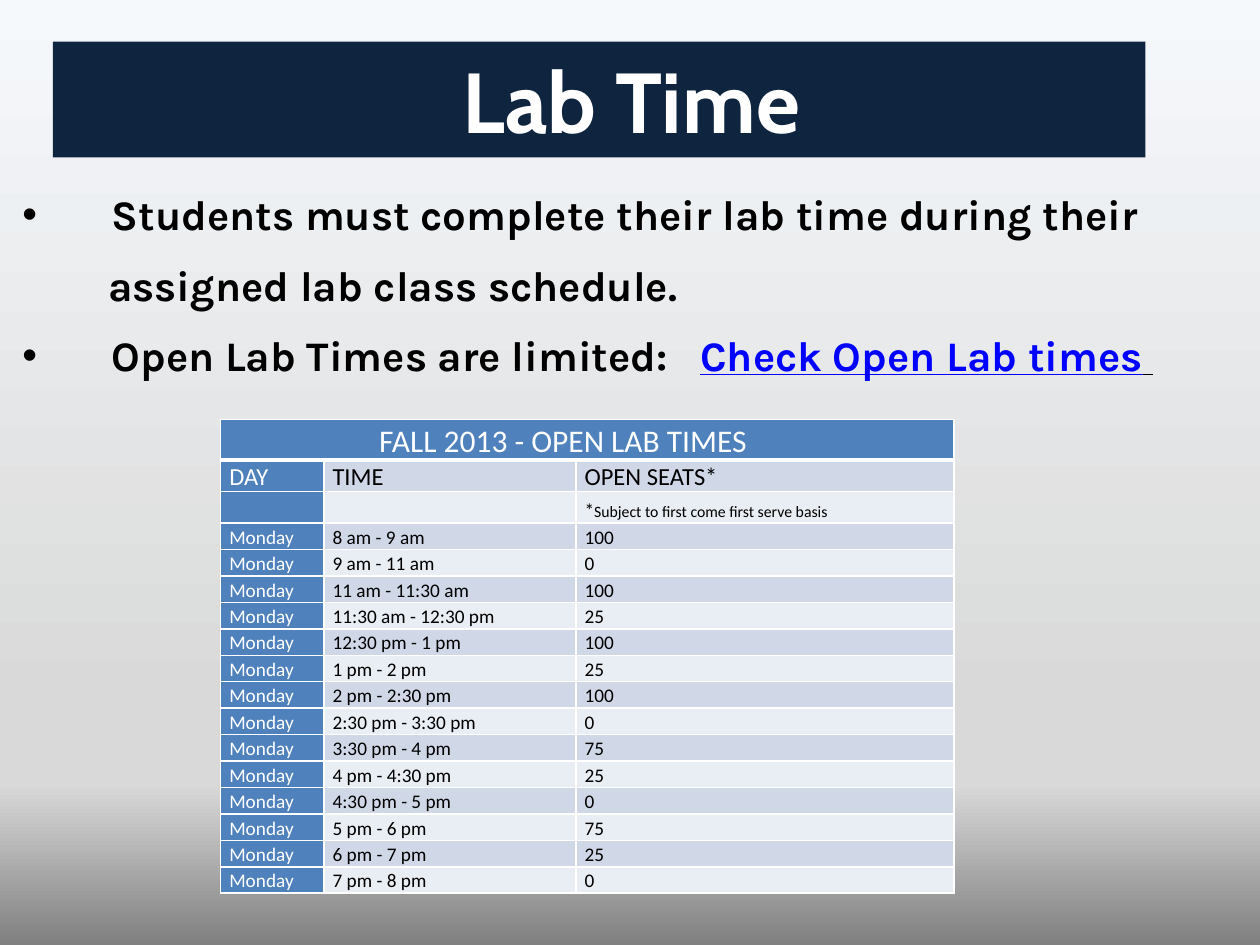
from lxml import etree
from pptx import Presentation
from pptx.dml.color import RGBColor
from pptx.enum.shapes import MSO_SHAPE
from pptx.enum.text import MSO_ANCHOR, PP_ALIGN
from pptx.oxml.ns import qn
from pptx.util import Inches, Pt

RECT = MSO_SHAPE.RECTANGLE
MID, LOW, TOP = MSO_ANCHOR.MIDDLE, MSO_ANCHOR.BOTTOM, MSO_ANCHOR.TOP
MIDDLE, LEFT = PP_ALIGN.CENTER, PP_ALIGN.LEFT
WHITE, BLACK, NAVY, LINK = "FFFFFF", "000000", "0F243E", "0000FF"
BLUE, PALE, LIGHT = "4F81BD", "D0D8E8", "E9EDF4"


def color(code):
    return RGBColor.from_string(code)


def apply(item, values):
    for name, value in values.items():
        setattr(item, name, value)


def add(parent, tag, **values):
    return etree.SubElement(parent, qn(tag), values)


class Deck:
    def __init__(self):
        self.file = Presentation()
        apply(self.file, {"slide_width": Inches(10), "slide_height": Inches(7.5)})
        self.unit = self.file.slide_width / 100
        self.slide = self.file.slides.add_slide(self.file.slide_layouts[6])

    def size(self, count):
        return round(count * self.unit)

    def box(self, spot):
        return [self.size(n) for n in spot]

    def shade(self, stops):
        fill = self.slide.background.fill
        fill.gradient()
        fill.gradient_angle = 270
        group = self.slide.element.find(".//" + qn("a:gsLst"))
        for old in list(group):
            group.remove(old)
        for share, code in stops:
            stop = add(group, "a:gs", pos=str(share * 1000))
            add(stop, "a:srgbClr", val=code)

    def text(self, para, words, tone, **font):
        run = para.add_run()
        run.text = words
        apply(run.font, font)
        run.font.color.rgb = color(tone)

    def banner(self, spot, words):
        shape = self.slide.shapes.add_shape(RECT, *self.box(spot))
        shape.shadow.inherit = False
        shape.fill.solid()
        shape.fill.fore_color.rgb = color(NAVY)
        shape.line.fill.background()
        frame = shape.text_frame
        apply(frame, {"word_wrap": True, "vertical_anchor": MID,
                      "margin_left": self.size(6.1), "margin_right": self.size(1)})
        para = frame.paragraphs[0]
        para.alignment = MIDDLE
        self.text(para, words, WHITE, name="Cabin", size=Pt(48.6), bold=True)

    def notes(self, spot, lines):
        frame = self.slide.shapes.add_textbox(*self.box(spot)).text_frame
        apply(frame, {"word_wrap": True, "vertical_anchor": TOP})
        for index, (bullet, runs) in enumerate(lines):
            para = frame.add_paragraph() if index else frame.paragraphs[0]
            apply(para, {"alignment": LEFT, "line_spacing": 1.2, "space_before": Pt(5.7)})
            props = para._p.get_or_add_pPr()
            props.set("marL", str(self.size(7.1 if bullet else 6.8)))
            props.set("indent", str(self.size(-7.1 if bullet else 0)))
            if bullet:
                add(props, "a:buFont", typeface="Arial")
                add(props, "a:buChar", char="•")
                tabs = add(props, "a:tabLst")
                add(tabs, "a:tab", pos=str(self.size(53.8)), algn="l")
            for words, tone, line in runs:
                self.text(para, words, tone, name="Karla", size=Pt(24),
                          bold=True, underline=line)

    def cell(self, cell, runs, tone, fill, left=0.7, anchor=LOW, base=1):
        apply(cell, {"margin_left": self.size(left), "margin_right": self.size(0.7),
                     "margin_top": 0, "margin_bottom": 0, "vertical_anchor": anchor})
        props = cell._tc.get_or_add_tcPr()
        for side in "LRTB":
            width = Pt(base if side == "B" else 1)
            edge = add(props, "a:ln" + side, w=str(int(width)))
            add(add(edge, "a:solidFill"), "a:srgbClr", val=WHITE)
        cell.fill.solid()
        cell.fill.fore_color.rgb = color(fill)
        para = cell.text_frame.paragraphs[0]
        para.line_spacing = 1.07
        for words, points in runs:
            self.text(para, words, tone, name="Calibri", size=Pt(points), bold=False)
        if not runs:
            add(para._p, "a:endParaRPr", sz="1100")

    def table(self, spot, cols, rows, title, data):
        table = self.slide.shapes.add_table(len(rows), len(cols), *self.box(spot)).table
        apply(table, {"first_row": False, "horz_banding": False})
        for col, width in zip(table.columns, cols):
            col.width = self.size(width)
        for row, height in zip(table.rows, rows):
            row.height = self.size(height)
        table.cell(0, 0).merge(table.cell(0, len(cols) - 1))
        for col in range(len(cols)):
            runs = [] if col else [(title, 18)]
            self.cell(table.cell(0, col), runs, WHITE, BLUE, 12.6, TOP, 3)
        for row, line in enumerate(data, 1):
            band = PALE if row % 2 else LIGHT
            for col, runs in enumerate(line):
                tone, fill = (BLACK, band) if col else (WHITE, BLUE)
                self.cell(table.cell(row, col), runs, tone, fill)


SEATS = [
    ("8 am - 9 am", 100), ("9 am - 11 am", 0), ("11 am - 11:30 am", 100),
    ("11:30 am - 12:30 pm", 25), ("12:30 pm - 1 pm", 100), ("1 pm - 2 pm", 25),
    ("2 pm - 2:30 pm", 100), ("2:30 pm - 3:30 pm", 0), ("3:30 pm - 4 pm", 75),
    ("4 pm - 4:30 pm", 25), ("4:30 pm - 5 pm", 0), ("5 pm - 6 pm", 75),
    ("6 pm - 7 pm", 25), ("7 pm - 8 pm", 0),
]


def main():
    deck = Deck()
    deck.shade([(0, "F6F9FC"), (74, "D9D9D9"), (83, "D9D9D9"), (100, "808080")])
    deck.banner((4.2, 3.3, 86.7, 9.2), "Lab Time")
    deck.notes((0.8, 13.7, 100, 53.3), [
        (True, [("Students must complete their lab time during their", BLACK, False)]),
        (False, [("assigned lab class schedule.", BLACK, False)]),
        (True, [("Open Lab Times are limited:\t", BLACK, False),
                ("Check Open Lab times", LINK, True), (" ", BLACK, True)]),
    ])
    heads = [[(words, 14)] for words in ("DAY", "TIME", "OPEN SEATS*")]
    hint = [[], [], [("*", 11), ("Subject to first come first serve basis", 9)]]
    slots = [[[(words, 11)] for words in ("Monday", time, str(count))]
             for time, count in SEATS]
    deck.table((17.5, 33.3, 58.2, 37.4), (8.2, 20, 30),
               [3, 2.5, 2.5] + [2.1] * len(SEATS),
               "FALL 2013 - OPEN LAB TIMES", [heads, hint] + slots)
    deck.file.save("out.pptx")


if __name__ == "__main__":
    main()
